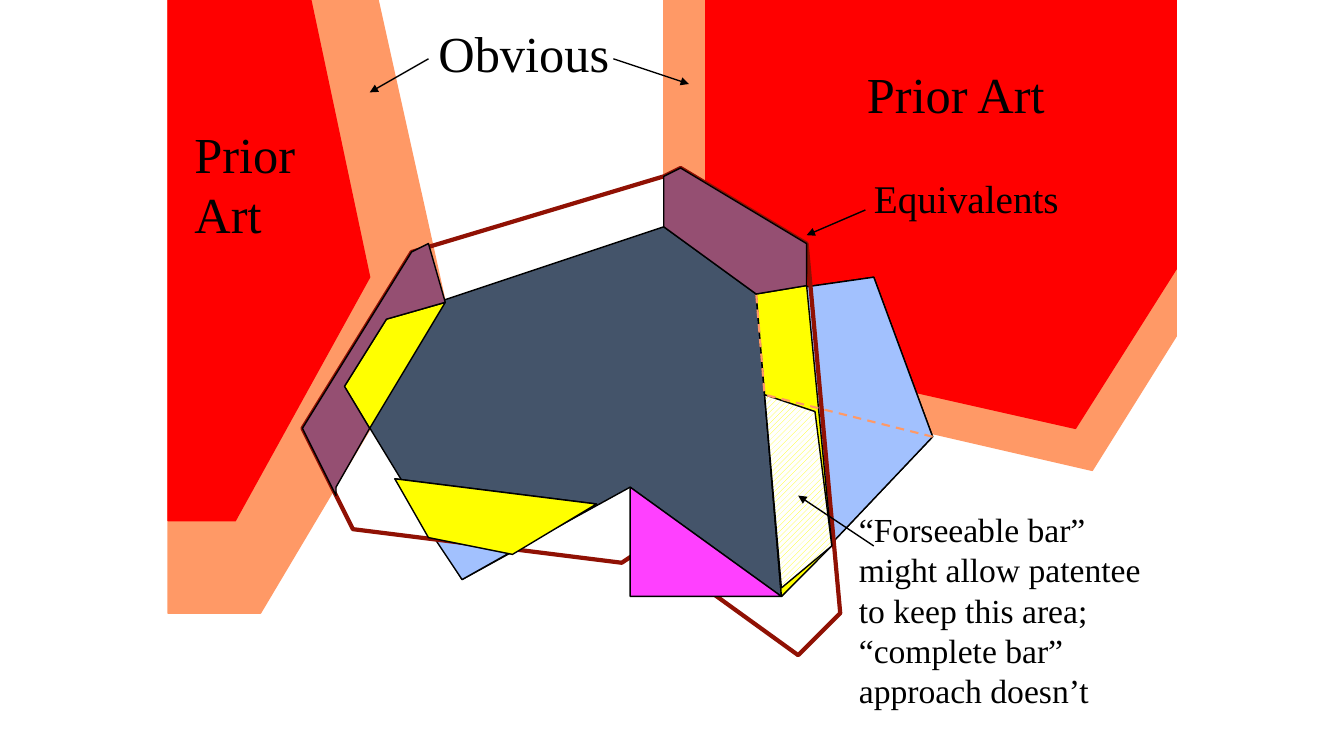
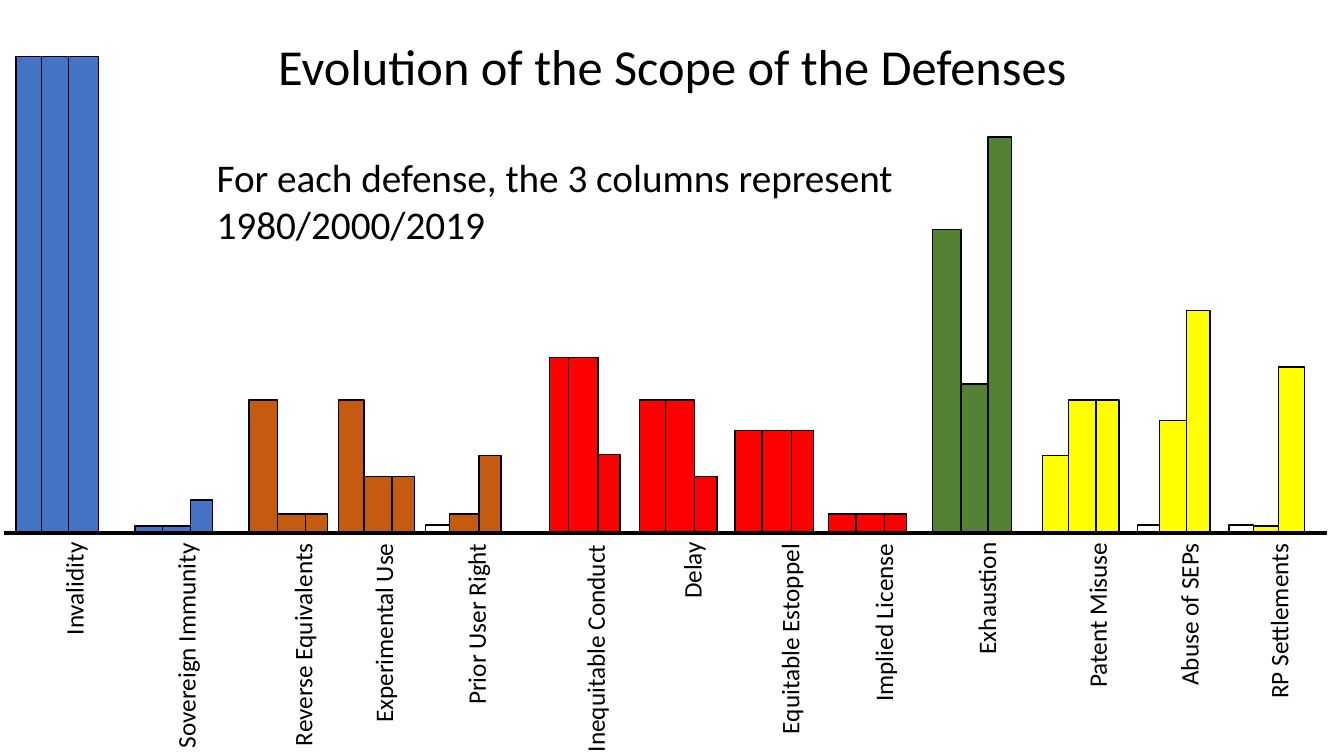
"""Build two slides on patent scope: a claim map and the evolution of the defenses."""
from lxml import etree
from pptx import Presentation
from pptx.dml.color import RGBColor
from pptx.enum.dml import MSO_LINE, MSO_PATTERN
from pptx.enum.shapes import MSO_CONNECTOR, MSO_SHAPE
from pptx.enum.text import MSO_ANCHOR, MSO_AUTO_SIZE, PP_ALIGN
from pptx.oxml.ns import qn
from pptx.util import Inches, Pt

STRAIGHT = MSO_CONNECTOR.STRAIGHT
RECTANGLE, RIGHT_TRIANGLE = MSO_SHAPE.RECTANGLE, MSO_SHAPE.RIGHT_TRIANGLE
DASH, HATCH = MSO_LINE.DASH, MSO_PATTERN.WIDE_UPWARD_DIAGONAL
CENTER, MIDDLE = PP_ALIGN.CENTER, MSO_ANCHOR.MIDDLE
FIT_SHAPE = MSO_AUTO_SIZE.SHAPE_TO_FIT_TEXT

BLACK, WHITE, RED, YELLOW = "000000", "FFFFFF", "FF0000", "FFFF00"
ORANGE, SLATE, SKY, PLUM = "FF9966", "44546A", "A2C1FE", "954F72"
MAROON, MAGENTA = "901104", "FF40FF"
BLUE, RUST, GREEN = "4472C4", "C55A11", "548235"
SERIF, SANS = "Times New Roman", "Calibri"

GRID = Inches(1 / 12)

LOWER_REGIONS = [
    ([(79, 0), (79, 27), (90, 35), (91, 47), (130, 56), (140, 40), (140, 0)],
     dict(fill=ORANGE, line=ORANGE)),
    ([(84, 0), (84, 25), (96, 33), (97, 44), (128, 51), (140, 32), (140, 0)],
     dict(fill=RED, line=RED)),
    ([(45, 0), (53, 36), (31, 73), (20, 73), (20, 0)], dict(fill=ORANGE, line=ORANGE)),
    ([(37, 0), (44, 33), (28, 62), (20, 62), (20, 0)], dict(fill=RED, line=RED)),
    ([(46, 38), (79, 27), (90, 35), (104, 33), (111, 52), (93, 71), (75, 58),
      (55, 69), (41, 46)], dict(fill=SLATE)),
    ([(90, 35), (93, 71), (111, 52), (104, 33)], dict(fill=SKY)),
    ([(47, 57), (71, 60), (55, 69)], dict(fill=SKY)),
    ([(79, 21), (49, 30), (36, 51), (42, 63), (74, 67), (77, 65), (95, 78),
      (100, 73), (96, 29), (81, 20)], dict(line=MAROON, weight=3)),
    ([(90, 35), (96, 34), (99, 65), (93, 71)], dict(fill=YELLOW)),
    ([(47, 57), (71, 60), (61, 66), (51, 64)], dict(fill=YELLOW)),
    ([(53, 36), (44, 51), (41, 46), (46, 38)], dict(fill=YELLOW)),
    ([(79, 21), (79, 27), (90, 35), (96, 34), (96, 29), (81, 20)], dict(fill=PLUM)),
]
DISCLAIMED_TRIANGLE = (75, 58, 18, 13)
UPPER_REGIONS = [
    ([(91, 47), (97, 49), (99, 65), (93, 70)], dict(fill=YELLOW, pattern=HATCH)),
    ([(111, 52), (91, 47), (90, 35)],
     dict(line=ORANGE, weight=1.5, dash=DASH, closed=False)),
    ([(40, 58), (44, 51), (41, 46), (46, 38), (53, 36), (51, 29), (49, 30),
      (36, 51), (40, 59)], dict(fill=PLUM)),
]
ARROWS = [((51, 7), (44, 11)), ((73, 7), (82, 10)),
          ((103, 25), (96, 28)), ((104, 65), (95, 59))]
MAP_LABELS = [
    (["Prior Art"], (8.5, 0.58, 1.99, 0.7), 36),
    (["Prior", "Art"], (1.83, 1.17, 1.33, 1.3), 36),
    (["Obvious"], (4.25, 0.17, 1.9, 0.7), 36),
    (["Equivalents"], (8.57, 1.68, 2.03, 0.56), 28),
    (["“Forseeable bar”", "might allow patentee", "to keep this area;",
      "“complete bar”", "approach doesn’t"], (8.42, 5, 3.02, 2.12), 24),
]

TITLE = "Evolution of the Scope of the Defenses"
LEGEND = ["For each defense, the 3 columns represent", "1980/2000/2019"]
BASELINE, STUB, LABEL_TOP, LABEL_HEIGHT = 5.28, 0.07, 5.27, 0.4
# Name, colour, column edges, column heights, label centre, label length
DEFENSES = [
    ("Invalidity", BLUE, (0.16, 0.41, 0.68, 0.98), (4.72, 4.72, 4.72), 0.73, 1.13),
    ("Sovereign Immunity", BLUE, (1.34, 1.61, 1.89, 2.11), (0.06, 0.06, 0.32), 1.84, 2.25),
    ("Reverse Equivalents", RUST, (2.47, 2.75, 3.03, 3.25), (1.31, 0.18, 0.18), 3, 2.23),
    ("Experimental Use", RUST, (3.36, 3.61, 3.89, 4.11), (1.31, 0.55, 0.55), 3.8, 2),
    ("Prior User Right", RUST, (4.22, 4.46, 4.75, 4.97), (0, 0.18, 0.76), 4.72, 1.82),
    ("Inequitable Conduct", RED, (5.45, 5.64, 5.93, 6.15), (1.73, 1.73, 0.77), 5.9, 2.29),
    ("Delay", RED, (6.34, 6.6, 6.89, 7.11), (1.31, 1.31, 0.55), 6.86, 0.77),
    ("Equitable Estoppel", RED, (7.29, 7.56, 7.85, 8.07), (1.01, 1.01, 1.01), 7.83, 2.11),
    ("Implied License", RED, (8.22, 8.49, 8.77, 8.99), (0.18, 0.18, 0.18), 8.76, 1.79),
    ("Exhaustion", GREEN, (9.25, 9.53, 9.8, 10.03), (3, 1.47, 3.92), 9.78, 1.32),
    ("Patent Misuse", YELLOW, (10.34, 10.6, 10.87, 11.1), (0.76, 1.31, 1.31), 10.88, 1.65),
    ("Abuse of SEPs", YELLOW, (11.28, 11.5, 11.77, 12), (0, 1.11, 2.2), 11.79, 1.63),
    ("RP Settlements", YELLOW, (12.19, 12.43, 12.68, 12.94), (0, 0.06, 1.64), 12.68, 1.76),
]


def color(value):
    """Turn a hex string into a colour."""
    return RGBColor.from_string(value)


def paint(shape, fill=None, line=BLACK, weight=1, dash=None, pattern=None):
    """Set a shape's fill and outline, and drop its shadow."""
    shape.shadow.inherit = False
    if fill is None:
        shape.fill.background()
    elif pattern is None:
        shape.fill.solid()
        shape.fill.fore_color.rgb = color(fill)
    else:
        shape.fill.patterned()
        shape.fill.pattern = pattern
        shape.fill.fore_color.rgb = color(fill)
        shape.fill.back_color.rgb = color(WHITE)
    shape.line.color.rgb = color(line)
    shape.line.width = Pt(weight)
    if dash is not None:
        shape.line.dash_style = dash


def write(frame, lines, size, font=SANS, align=None, spacing=None):
    """Fill a text frame with one formatted paragraph for each line."""
    for index, text in enumerate(lines):
        paragraph = frame.add_paragraph() if index else frame.paragraphs[0]
        paragraph.alignment = align
        paragraph.line_spacing = spacing
        run = paragraph.add_run()
        run.text = text
        run.font.size, run.font.name = Pt(size), font
        run.font.color.rgb = color(BLACK)


def add_text(slide, lines, box, size, rotation=0, **text_format):
    """Add an unwrapped text box, with its place in inches."""
    shape = slide.shapes.add_textbox(*map(Inches, box))
    shape.rotation = rotation
    shape.text_frame.word_wrap = False
    shape.text_frame.auto_size = FIT_SHAPE
    write(shape.text_frame, lines, size, **text_format)


def add_region(slide, points, closed=True, **look):
    """Add a polygon whose corners lie on the grid."""
    builder = slide.shapes.build_freeform(*points[0], scale=GRID)
    builder.add_line_segments(points[1:], close=closed)
    paint(builder.convert_to_shape(), **look)


def add_line(slide, start, end, weight=1, arrow=False):
    """Add a black straight line, with an arrowhead at its end if asked."""
    connector = slide.shapes.add_connector(STRAIGHT, *start, *end)
    connector.line.color.rgb = color(BLACK)
    connector.line.width = Pt(weight)
    properties = connector._element.spPr
    if arrow:
        etree.SubElement(properties.find(qn("a:ln")), qn("a:tailEnd"), type="triangle")
    etree.SubElement(properties, qn("a:effectLst"))


def build_claim_map(slide):
    """Draw the claim, its equivalents and the prior art around it."""
    for points, look in LOWER_REGIONS:
        add_region(slide, points, **look)
    triangle = slide.shapes.add_shape(
        RIGHT_TRIANGLE, *(GRID * length for length in DISCLAIMED_TRIANGLE))
    paint(triangle, fill=MAGENTA)
    for points, look in UPPER_REGIONS:
        add_region(slide, points, **look)
    for lines, box, size in MAP_LABELS:
        add_text(slide, lines, box, size, font=SERIF)
    for ends in ARROWS:
        start, end = ([GRID * value for value in point] for point in ends)
        add_line(slide, start, end, arrow=True)


def build_defenses(slide):
    """Draw three columns and an upright label for each defense."""
    title = slide.shapes.title
    title.left, title.top, title.width, title.height = map(Inches, (0.9, 0.21, 11.54, 0.96))
    title.text_frame.vertical_anchor = MIDDLE
    write(title.text_frame, [TITLE], 36, align=CENTER, spacing=0.9)
    add_text(slide, LEGEND, (2.05, 1.47, 6.99, 1.04), 28)
    for name, fill, edges, heights, centre, length in DEFENSES:
        for left, right, height in zip(edges, edges[1:], heights):
            drawn = height or STUB
            column = slide.shapes.add_shape(
                RECTANGLE, *map(Inches, (left, BASELINE - drawn, right - left, drawn)))
            paint(column, fill=fill if height else None)
        box = (centre - length / 2, LABEL_TOP + (length - LABEL_HEIGHT) / 2,
               length, LABEL_HEIGHT)
        add_text(slide, [name], box, 18, rotation=270)
    add_line(slide, (Inches(0.04), Inches(5.29)), (Inches(13.16), Inches(5.29)), weight=3)


def main():
    """Build and save the presentation."""
    presentation = Presentation()
    presentation.slide_width, presentation.slide_height = Inches(13.33), Inches(7.5)
    for layout, build in ((6, build_claim_map), (5, build_defenses)):
        build(presentation.slides.add_slide(presentation.slide_layouts[layout]))
    presentation.save("out.pptx")


if __name__ == "__main__":
    main()
